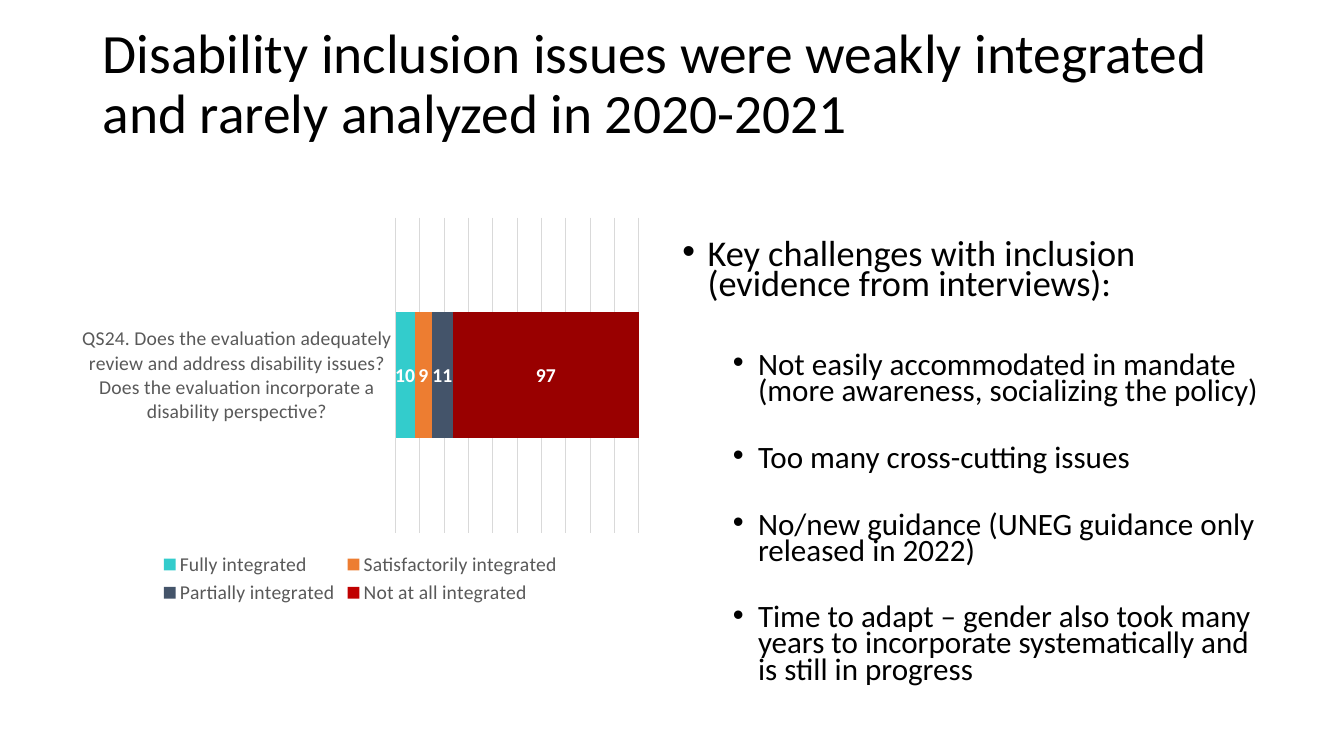
"""Build the slide on how far disability inclusion was integrated in evaluations."""
import dataclasses
import typing

import lxml.etree
import pptx
import pptx.chart.data
import pptx.dml.color
import pptx.enum.chart
import pptx.enum.text
import pptx.oxml.ns
import pptx.util

Inches = pptx.util.Inches
Pt = pptx.util.Pt
RGBColor = pptx.dml.color.RGBColor

BLACK = RGBColor(0x00, 0x00, 0x00)
WHITE = RGBColor(0xFF, 0xFF, 0xFF)
GRAY = RGBColor(0x59, 0x59, 0x59)
GRID = RGBColor(0xD9, 0xD9, 0xD9)
TEAL = RGBColor(0x33, 0xCC, 0xCC)
ORANGE = RGBColor(0xED, 0x7D, 0x31)
SLATE = RGBColor(0x44, 0x54, 0x6A)
RED = RGBColor(0xC0, 0x00, 0x00)
DARK_RED = RGBColor(0x99, 0x00, 0x00)

QUESTION = (
    "QS24. Does the evaluation adequately review and address disability issues? "
    "Does the evaluation incorporate a disability perspective?"
)


@dataclasses.dataclass(frozen=True)
class Line:
    text: str
    size: float
    spacing: float
    before: float = 0
    indent: float = 0
    bullet: bool = False
    level: int = 0


@dataclasses.dataclass(frozen=True)
class Rating:
    name: str
    count: int
    color: RGBColor
    bar_color: RGBColor


HEADLINE = [Line("Disability inclusion issues were weakly integrated and rarely analyzed in 2020-2021", 39.6, 0.9)]
CHALLENGES = [
    Line("Key challenges with inclusion (evidence from interviews):", 25.9, 0.7, 10, 0.25, True),
    Line("Not easily accommodated in mandate (more awareness, socializing the policy)", 22.2, 0.7, 37, 0.75, True, 1),
] + [
    Line(text, 22.2, 0.7, 29, 0.75, True, 1)
    for text in (
        "Too many cross-cutting issues",
        "No/new guidance (UNEG guidance only released in 2022)",
        "Time to adapt – gender also took many years to incorporate systematically and is still in progress",
    )
]
RATINGS = [
    Rating("Fully integrated", 10, TEAL, TEAL),
    Rating("Satisfactorily integrated", 9, ORANGE, ORANGE),
    Rating("Partially integrated", 11, SLATE, SLATE),
    Rating("Not at all integrated", 97, RED, DARK_RED),
]


def apply_format(target: typing.Any, values: dict[str, typing.Any]) -> None:
    """Set every named attribute on the target."""
    for name, value in values.items():
        setattr(target, name, value)


def style_font(font: typing.Any, size: float, color: RGBColor, bold: bool = False) -> None:
    """Give a font its face, size, weight and colour."""
    apply_format(font, {"name": "Calibri", "size": Pt(size), "bold": bold})
    font.color.rgb = color


def add_bullet(paragraph: typing.Any, indent: float) -> None:
    """Hang a round bullet a quarter inch before the text."""
    properties = paragraph._p.get_or_add_pPr()
    properties.set("marL", str(Inches(indent)))
    properties.set("indent", str(Inches(-0.25)))
    for tag, key, value in (("a:buFont", "typeface", "Arial"), ("a:buChar", "char", "•")):
        lxml.etree.SubElement(properties, pptx.oxml.ns.qn(tag)).set(key, value)


def add_text(slide: typing.Any, place: tuple[float, ...], lines: list[Line], frame_format: dict[str, typing.Any]) -> None:
    """Add a wrapped text box holding one paragraph for each line."""
    frame = slide.shapes.add_textbox(*map(Inches, place)).text_frame
    apply_format(frame, {"word_wrap": True, **frame_format})
    for number, line in enumerate(lines):
        paragraph = frame.add_paragraph() if number else frame.paragraphs[0]
        apply_format(paragraph, {
            "level": line.level, "line_spacing": line.spacing, "space_before": Pt(line.before),
        })
        if line.bullet:
            add_bullet(paragraph, line.indent)
        run = paragraph.add_run()
        run.text = line.text
        style_font(run.font, line.size, BLACK)


def add_ratings_chart(slide: typing.Any) -> None:
    """Add the stacked bar of evaluation ratings."""
    ratings_data = pptx.chart.data.CategoryChartData()
    ratings_data.categories = [QUESTION]
    for rating in RATINGS:
        ratings_data.add_series(rating.name, [rating.count])
    chart = slide.shapes.add_chart(
        pptx.enum.chart.XL_CHART_TYPE.BAR_STACKED_100,
        Inches(0.7), Inches(2.08), Inches(5.75), Inches(3.96), ratings_data,
    ).chart
    style_font(chart.font, 14, BLACK)
    apply_format(chart, {"has_title": False, "has_legend": True})
    apply_format(chart.legend, {
        "position": pptx.enum.chart.XL_LEGEND_POSITION.BOTTOM, "include_in_layout": False,
    })
    style_font(chart.legend.font, 14, GRAY)

    questions = chart.category_axis
    no_tick = pptx.enum.chart.XL_TICK_MARK.NONE
    apply_format(questions, {"major_tick_mark": no_tick, "minor_tick_mark": no_tick})
    questions.format.line.fill.background()
    style_font(questions.tick_labels.font, 14, GRAY)
    apply_format(chart.value_axis, {"visible": False, "has_major_gridlines": True})
    grid_line = chart.value_axis.major_gridlines.format.line
    grid_line.color.rgb = GRID
    grid_line.width = Pt(0.75)

    plot = chart.plots[0]
    apply_format(plot, {"gap_width": 150, "overlap": 100, "vary_by_categories": False})
    for series, rating in zip(plot.series, RATINGS):
        series.format.fill.solid()
        series.format.fill.fore_color.rgb = rating.color
        if rating.bar_color != rating.color:
            bar_fill = series.points[0].format.fill
            bar_fill.solid()
            bar_fill.fore_color.rgb = rating.bar_color
        apply_format(series.data_labels, {
            "show_value": True, "position": pptx.enum.chart.XL_LABEL_POSITION.CENTER,
        })
        style_font(series.data_labels.font, 14, WHITE, True)


def main() -> None:
    """Build and save the slide."""
    deck = pptx.Presentation()
    apply_format(deck, {"slide_width": Inches(13.33), "slide_height": Inches(7.5)})
    slide = deck.slides.add_slide(deck.slide_layouts[6])
    add_text(slide, (0.92, 0.4, 11.5, 1.45), HEADLINE, {
        "vertical_anchor": pptx.enum.text.MSO_ANCHOR.MIDDLE, "margin_bottom": Inches(0.6),
    })
    add_text(slide, (6.67, 1.9, 6.04, 5.2), CHALLENGES, {"margin_top": Inches(0.5)})
    add_ratings_chart(slide)
    deck.save("out.pptx")


if __name__ == "__main__":
    main()
